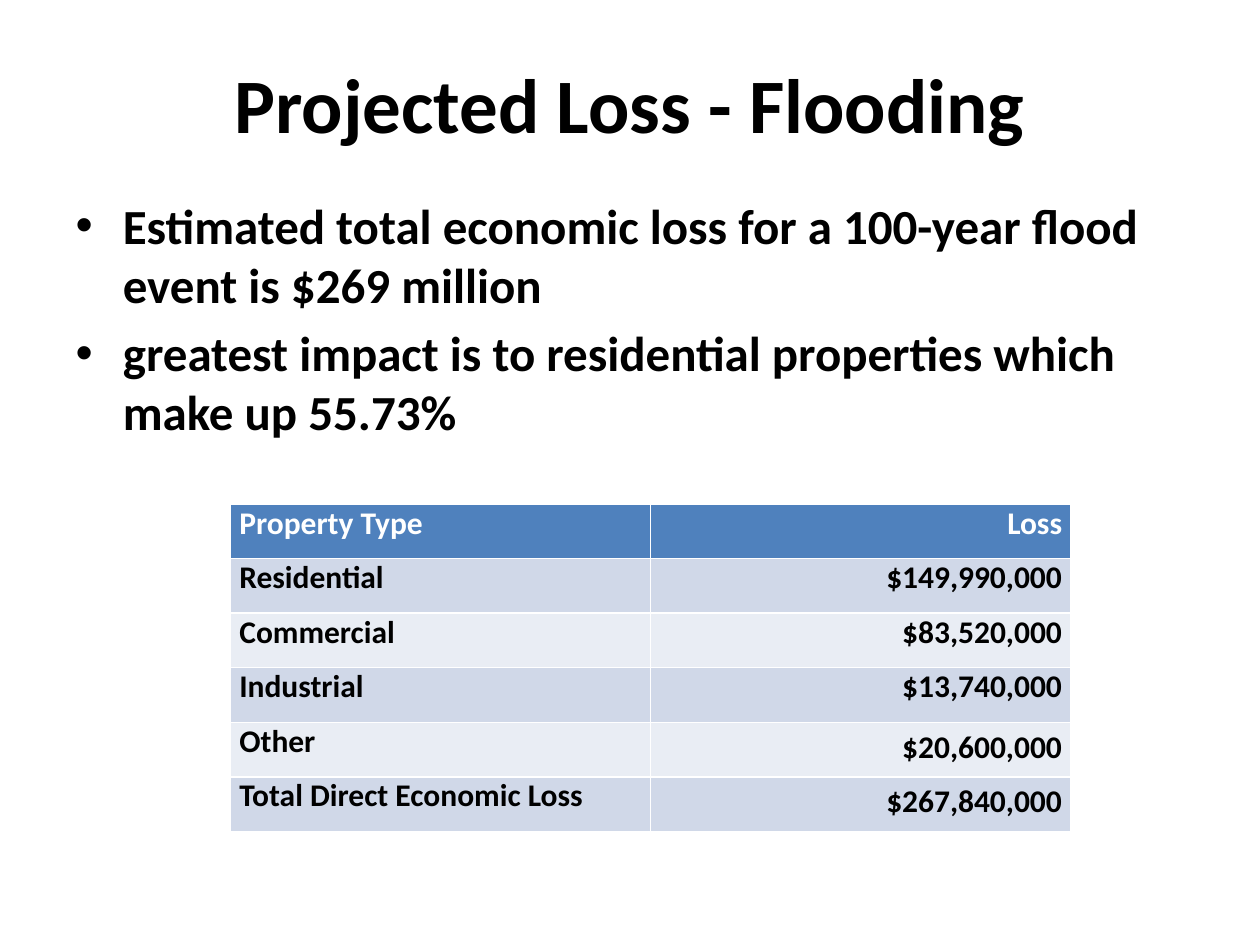
from pptx import Presentation
from pptx import util as u
from pptx.dml.color import RGBColor
from pptx.enum import text

COLORS = {
    "ink": "000000",
    "header_text": "FFFFFF",
    "header": "4F81BD",
    "band_dark": "D0D8E8",
    "band_light": "E9EDF4",
}
BULLETS = [
    "Estimated total economic loss for a 100-year flood event is $269 million",
    "greatest impact is to residential properties which make up 55.73%",
]
LOSSES = [
    ("Property Type", "Loss"),
    ("Residential", "$149,990,000"),
    ("Commercial", "$83,520,000"),
    ("Industrial", "$13,740,000"),
    ("Other", "$20,600,000"),
    ("Total Direct Economic Loss", "$267,840,000"),
]
LOOSE_ROWS = ("Other", "Total Direct Economic Loss")


def color(name):
    """Return the named colour."""
    return RGBColor.from_string(COLORS[name])


def style_font(paragraph, size, color_name):
    """Set the bold slide font on a paragraph."""
    font = paragraph.font
    font.name, font.size, font.bold = "Calibri", u.Pt(size), True
    font.color.rgb = color(color_name)


def place(shape, box):
    """Move a shape to a box of left, top, width and height in inches."""
    shape.left, shape.top, shape.width, shape.height = map(u.Inches, box)


def fill_title(slide, box, wording):
    """Place and write the centred title."""
    title = slide.shapes.title
    place(title, box)
    frame = title.text_frame
    frame.text = wording
    frame.vertical_anchor = text.MSO_ANCHOR.MIDDLE
    frame.paragraphs[0].alignment = text.PP_ALIGN.CENTER
    style_font(frame.paragraphs[0], 44, "ink")


def fill_bullets(slide, box, items):
    """Place and write the bulleted list."""
    body = slide.placeholders[1]
    place(body, box)
    frame = body.text_frame
    frame.text = "\n".join(items)
    for paragraph in frame.paragraphs:
        style_font(paragraph, 28, "ink")
    frame.paragraphs[0].space_before = u.Pt(0)


def fill_cell(cell, wording, fill_name, text_name):
    """Write one table cell and return its paragraph."""
    cell.margin_left = cell.margin_right = u.Inches(0.07)
    cell.margin_top = cell.margin_bottom = 0
    cell.fill.solid()
    cell.fill.fore_color.rgb = color(fill_name)
    cell.text = wording
    paragraph = cell.text_frame.paragraphs[0]
    style_font(paragraph, 18, text_name)
    return paragraph


def add_loss_table(slide, box, records):
    """Add the table of losses by property type."""
    table = slide.shapes.add_table(len(records), 2, *map(u.Inches, box)).table
    for row, (property_type, loss) in enumerate(records):
        fill_name = "band_dark" if row % 2 else "band_light"
        text_name = "ink"
        if row == 0:
            fill_name, text_name = "header", "header_text"
        fill_cell(table.cell(row, 0), property_type, fill_name, text_name)
        paragraph = fill_cell(table.cell(row, 1), loss, fill_name, text_name)
        paragraph.alignment = text.PP_ALIGN.RIGHT
        if property_type in LOOSE_ROWS:
            paragraph.line_spacing = 1.15


def main():
    """Build and save the flooding loss slide."""
    presentation = Presentation()
    presentation.slide_width = u.Inches(10)
    presentation.slide_height = u.Inches(7.5)
    slide = presentation.slides.add_slide(presentation.slide_layouts[1])
    fill_title(slide, (0.5, 0.3, 9, 1.03), "Projected Loss - Flooding")
    fill_bullets(slide, (0.5, 1.5, 9, 5.2), BULLETS)
    add_loss_table(slide, (1.83, 4, 6.67, 2.6), LOSSES)
    presentation.save("out.pptx")


if __name__ == "__main__":
    main()
